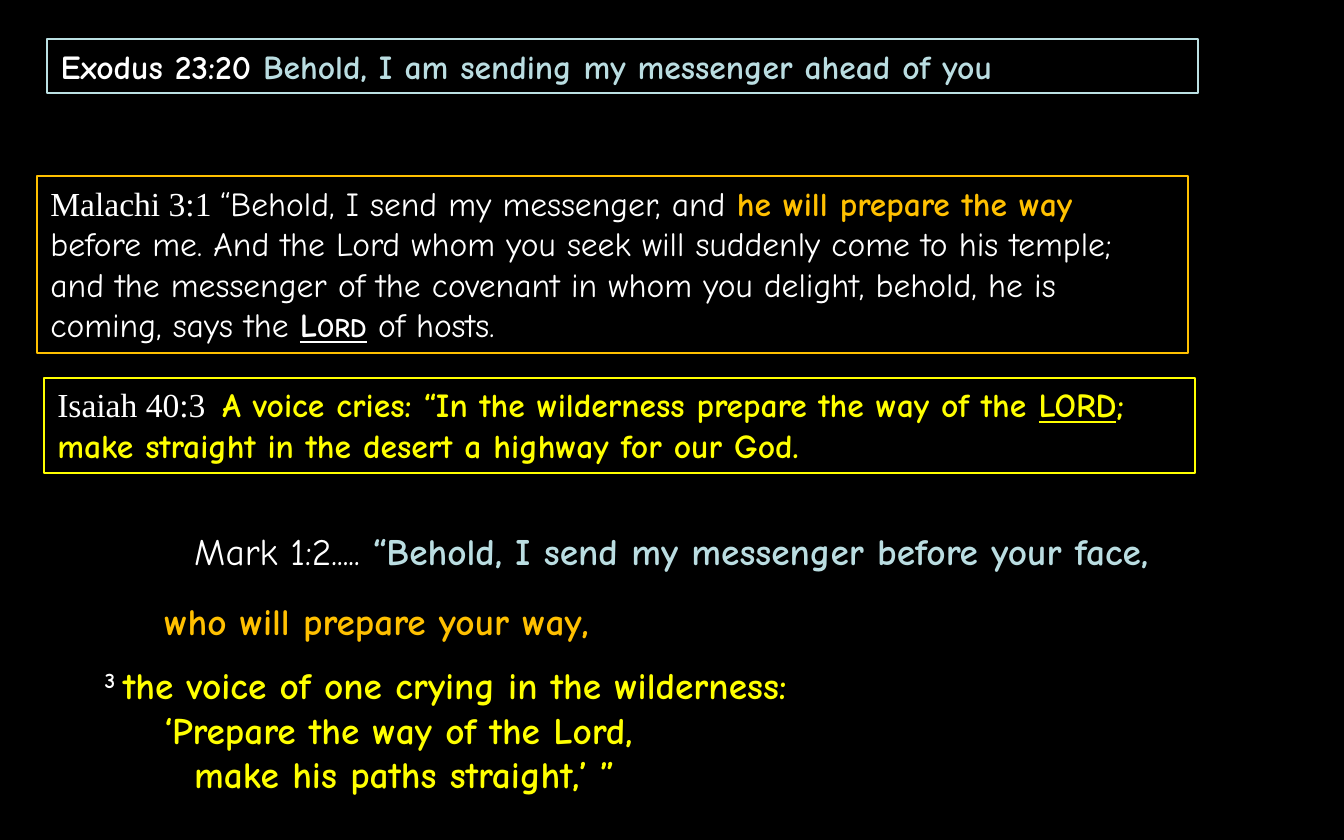
from pptx import Presentation
from pptx.dml.color import RGBColor
from pptx.enum.shapes import MSO_SHAPE
from pptx.enum.text import MSO_ANCHOR, PP_ALIGN
from pptx.util import Pt

WHITE, BLACK = "FFFFFF", "000000"
SKY, PALE_SKY, AMBER, YELLOW = "BBE0E3", "BADDE1", "FFC000", "FFFF00"
SANS, SERIF = "Comic Neue", "Times New Roman"


def color(hex_code):
    return RGBColor.from_string(hex_code)


def add_text(paragraph, text, size=18, font=SANS, fill=WHITE, bold=False,
             underline=False, **attributes):
    """Append a run; extra keywords become raw run attributes (cap, baseline)."""
    run = paragraph.add_run()
    run.text = text
    run.font.size = Pt(size)
    run.font.name = font
    run.font.bold = bold
    run.font.underline = underline
    run.font.color.rgb = color(fill)
    for key, value in attributes.items():
        run.font._element.set(key, value)


def add_prophecy(slide, box, border, phrases):
    """Outlined box holding one verse, given as (text, format) phrases."""
    frame = slide.shapes.add_shape(MSO_SHAPE.RECTANGLE, *map(Pt, box))
    frame.shadow.inherit = False
    frame.fill.background()
    frame.line.color.rgb = color(border)
    frame.line.width = Pt(1)
    verse = frame.text_frame
    verse.word_wrap = True
    verse.vertical_anchor = MSO_ANCHOR.TOP
    paragraph = verse.paragraphs[0]
    paragraph.alignment = PP_ALIGN.LEFT
    for text, style in phrases:
        add_text(paragraph, text, **style)


def add_fulfilment(slide, box, lines):
    """Open text box; each line is (first-line indent, spaced, phrases)."""
    passage = slide.shapes.add_textbox(*map(Pt, box)).text_frame
    passage.word_wrap = True
    for number, (indent, spaced, phrases) in enumerate(lines):
        paragraph = passage.add_paragraph() if number else passage.paragraphs[0]
        properties = paragraph._p.get_or_add_pPr()
        properties.set("marL", str(Pt(48)))
        properties.set("indent", str(Pt(indent)))
        if spaced:
            paragraph.line_spacing = 1.15
            paragraph.space_after = Pt(10)
        for text, style in phrases:
            add_text(paragraph, text, size=20, **style)


def main():
    deck = Presentation()
    deck.slide_width, deck.slide_height = Pt(720), Pt(450)
    slide = deck.slides.add_slide(deck.slide_layouts[6])
    slide.background.fill.solid()
    slide.background.fill.fore_color.rgb = color(BLACK)

    reference = dict(font=SERIF)
    messenger = dict(fill=PALE_SKY, bold=True)
    prepare = dict(fill=AMBER, bold=True)
    voice = dict(fill=YELLOW, bold=True)
    width = 616.5

    add_prophecy(slide, (25.4, 20.8, width, 29), SKY, [
        ("Exodus 23:20 ", dict(bold=True)),
        ("Behold, I am sending my messenger ahead of you", messenger),
    ])
    add_prophecy(slide, (19.9, 94.5, width, 94.5), AMBER, [
        ("Malachi 3:1 ", reference),
        ("“Behold, I send my messenger, and ", {}),
        ("he will prepare the way ", prepare),
        ("before me. And the Lord whom you seek will suddenly come to his "
         "temple; and the messenger of the covenant in whom you delight, "
         "behold, he is coming, says the ", {}),
        ("Lord", dict(bold=True, underline=True, cap="small")),
        (" of hosts.", {}),
    ])
    add_prophecy(slide, (23.6, 202.3, width, 51), YELLOW, [
        ("Isaiah 40:3  ", reference),
        ("A voice cries: “In the wilderness prepare the way of the ", voice),
        ("LORD", dict(voice, underline=True)),
        (";  make straight in the desert a highway for our God.", voice),
    ])
    add_fulfilment(slide, (49, 275.8, 645, 156), [
        (0, True, [
            ("Mark 1:2..... ", {}),
            ("“Behold, I send my messenger before your face,", messenger),
        ]),
        (-16, True, [("who will prepare your way,", prepare)]),
        (-48, False, [
            ("3 ", dict(bold=True, baseline="30000")),
            ("the voice of one crying in the wilderness:", voice),
        ]),
        (-16, False, [("‘Prepare the way of the Lord,", voice)]),
        (0, False, [("make his paths straight,’ ”", voice)]),
    ])
    deck.save("out.pptx")


if __name__ == "__main__":
    main()
